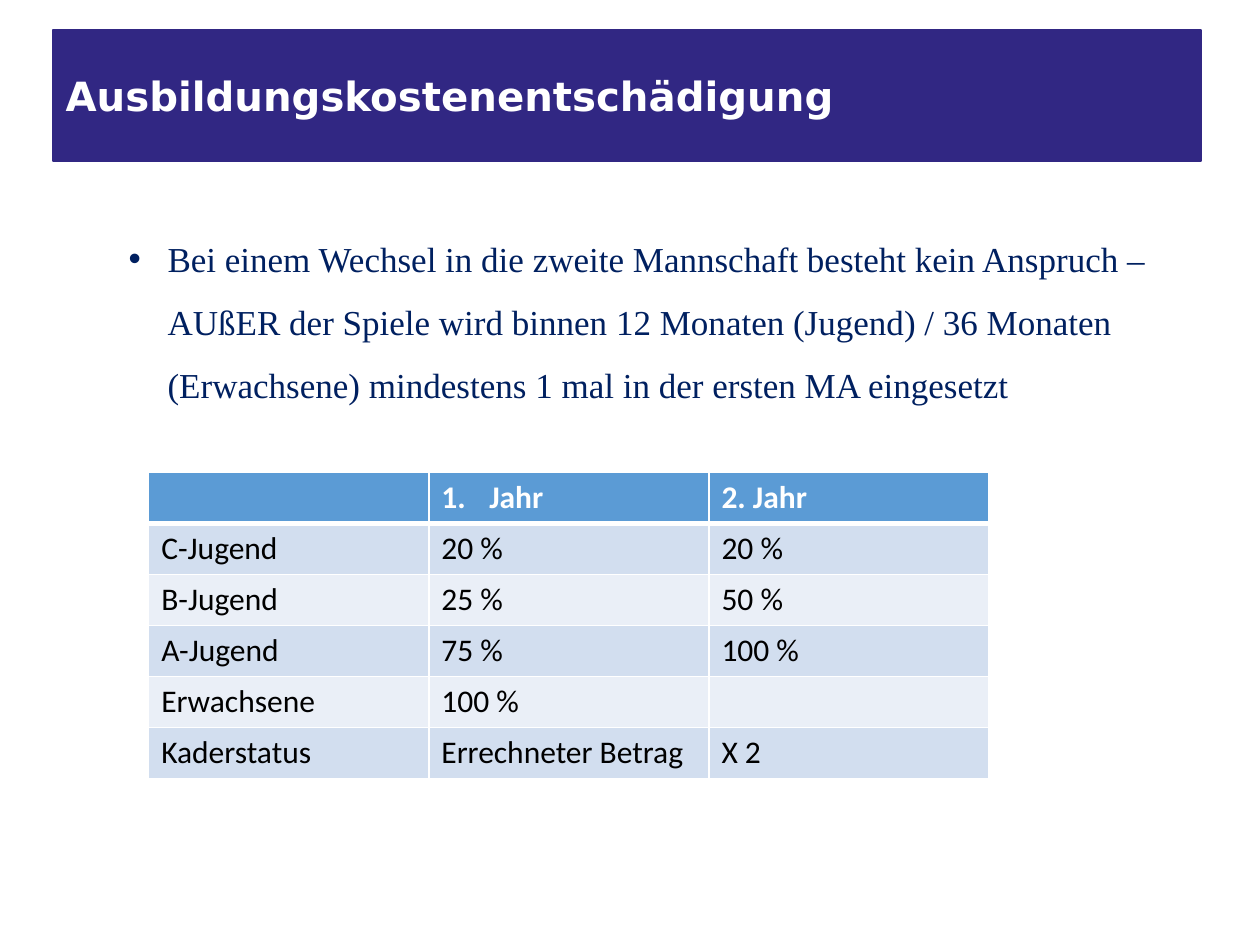
"""Build a slide on training compensation with a bullet and a rate table."""
from lxml import etree
from pptx import Presentation
from pptx.dml.color import RGBColor
from pptx.enum.shapes import MSO_SHAPE
from pptx.enum.text import MSO_ANCHOR, MSO_AUTO_SIZE, PP_ALIGN
from pptx.oxml.ns import qn
from pptx.util import Inches, Pt

RECT = MSO_SHAPE.RECTANGLE
MIDDLE, TOP = MSO_ANCHOR.MIDDLE, MSO_ANCHOR.TOP
FIXED, GROW = MSO_AUTO_SIZE.NONE, MSO_AUTO_SIZE.SHAPE_TO_FIT_TEXT
LEFT = PP_ALIGN.LEFT

WHITE = RGBColor(0xFF, 0xFF, 0xFF)
BLACK = RGBColor(0x00, 0x00, 0x00)
INDIGO = RGBColor(0x31, 0x27, 0x83)
NAVY = RGBColor(0x00, 0x20, 0x60)
BLUE = RGBColor(0x5B, 0x9B, 0xD5)
BANDS = (RGBColor(0xEA, 0xEF, 0xF7), RGBColor(0xD2, 0xDE, 0xEF))

ROWS = [
    ("", "Jahr", "2. Jahr"),
    ("C-Jugend", "20 %", "20 %"),
    ("B-Jugend", "25 %", "50 %"),
    ("A-Jugend", "75 %", "100 %"),
    ("Erwachsene", "100 %", ""),
    ("Kaderstatus", "Errechneter Betrag", "X 2"),
]


class Deck:
    """Hold the style and the current slide."""

    def __init__(self):
        self.show = Presentation()
        self.show.slide_width, self.show.slide_height = Inches(10), Inches(7.5)
        self.slide = self.show.slides.add_slide(self.show.slide_layouts[1])

    def place(self, shape, box):
        """Move a shape to a box given in inches."""
        shape.left, shape.top, shape.width, shape.height = map(Inches, box)

    def text(self, para, words, face, size, color, bold=False):
        """Add one formatted run."""
        run = para.add_run()
        run.text = words
        font = run.font
        font.name, font.size, font.bold = face, Pt(size), bold
        font.color.rgb = color

    def mark(self, para, kind, indent, **attrs):
        """Give a paragraph a bullet or number with a hanging indent."""
        props = para._p.get_or_add_pPr()
        props.set("marL", str(Inches(indent[0])))
        props.set("indent", str(Inches(indent[1])))
        etree.SubElement(props, qn(kind), attrs)

    def bar(self, box, color):
        """Draw a filled bar behind the placeholders."""
        shape = self.slide.shapes.add_shape(RECT, *map(Inches, box))
        shape.shadow.inherit = False
        shape.fill.solid()
        shape.fill.fore_color.rgb = color
        shape.line.color.rgb = color
        shape.line.width = Pt(1)
        self.slide.shapes.title._element.addprevious(shape._element)

    def title(self, words, box):
        """Fill the title placeholder."""
        shape = self.slide.shapes.title
        self.place(shape, box)
        frame = shape.text_frame
        frame.auto_size, frame.vertical_anchor = FIXED, MIDDLE
        para = frame.paragraphs[0]
        para.alignment, para.line_spacing = LEFT, 0.9
        self.text(para, words, "DejaVu Sans", 23, WHITE, True)

    def body(self, words, box):
        """Fill the body placeholder with one bullet."""
        shape = self.slide.placeholders[1]
        self.place(shape, box)
        frame = shape.text_frame
        frame.auto_size, frame.vertical_anchor = GROW, TOP
        para = frame.paragraphs[0]
        para.level, para.line_spacing, para.space_before = 1, 1.5, Pt(0)
        self.mark(para, "a:buChar", (0.81, -0.31), char="•")
        self.text(para, words, "Times New Roman", 20, NAVY)

    def edge(self, cell, side, width):
        """Draw one white cell border."""
        props = cell._tc.get_or_add_tcPr()
        line = etree.SubElement(props, qn("a:ln" + side), w=str(Pt(width)))
        fill = etree.SubElement(line, qn("a:solidFill"))
        etree.SubElement(fill, qn("a:srgbClr"), val=str(WHITE))

    def table(self, rows, box):
        """Draw a banded table with a header row."""
        shape = self.slide.shapes.add_table(
            len(rows), len(rows[0]), *map(Inches, box))
        for i, row in enumerate(rows):
            head = i == 0
            for j, words in enumerate(row):
                cell = shape.table.cell(i, j)
                for side in "LRTB":
                    thick = (side, i) in (("B", 0), ("T", 1))
                    self.edge(cell, side, 3 if thick else 1)
                cell.fill.solid()
                cell.fill.fore_color.rgb = BLUE if head else BANDS[i % 2]
                para = cell.text_frame.paragraphs[0]
                if words == "Jahr":
                    self.mark(para, "a:buAutoNum", (0.38, -0.38),
                              type="arabicPeriod")
                if words:
                    self.text(para, words, "Calibri", 18,
                              WHITE if head else BLACK, head)


def main():
    deck = Deck()
    deck.bar((0.42, 0.24, 9.11, 1.04), INDIGO)
    deck.title("Ausbildungskostenentschädigung", (0.42, 0.19, 9.11, 1.19))
    deck.body("Bei einem Wechsel in die zweite Mannschaft besteht kein "
              "Anspruch – AUßER der Spiele wird binnen 12 Monaten (Jugend) "
              "/ 36 Monaten (Erwachsene) mindestens 1 mal in der ersten MA "
              "eingesetzt", (0.42, 1.67, 9.12, 1.56))
    deck.table(ROWS, (1.18, 3.75, 6.67, 2.43))
    deck.show.save("out.pptx")


if __name__ == "__main__":
    main()
